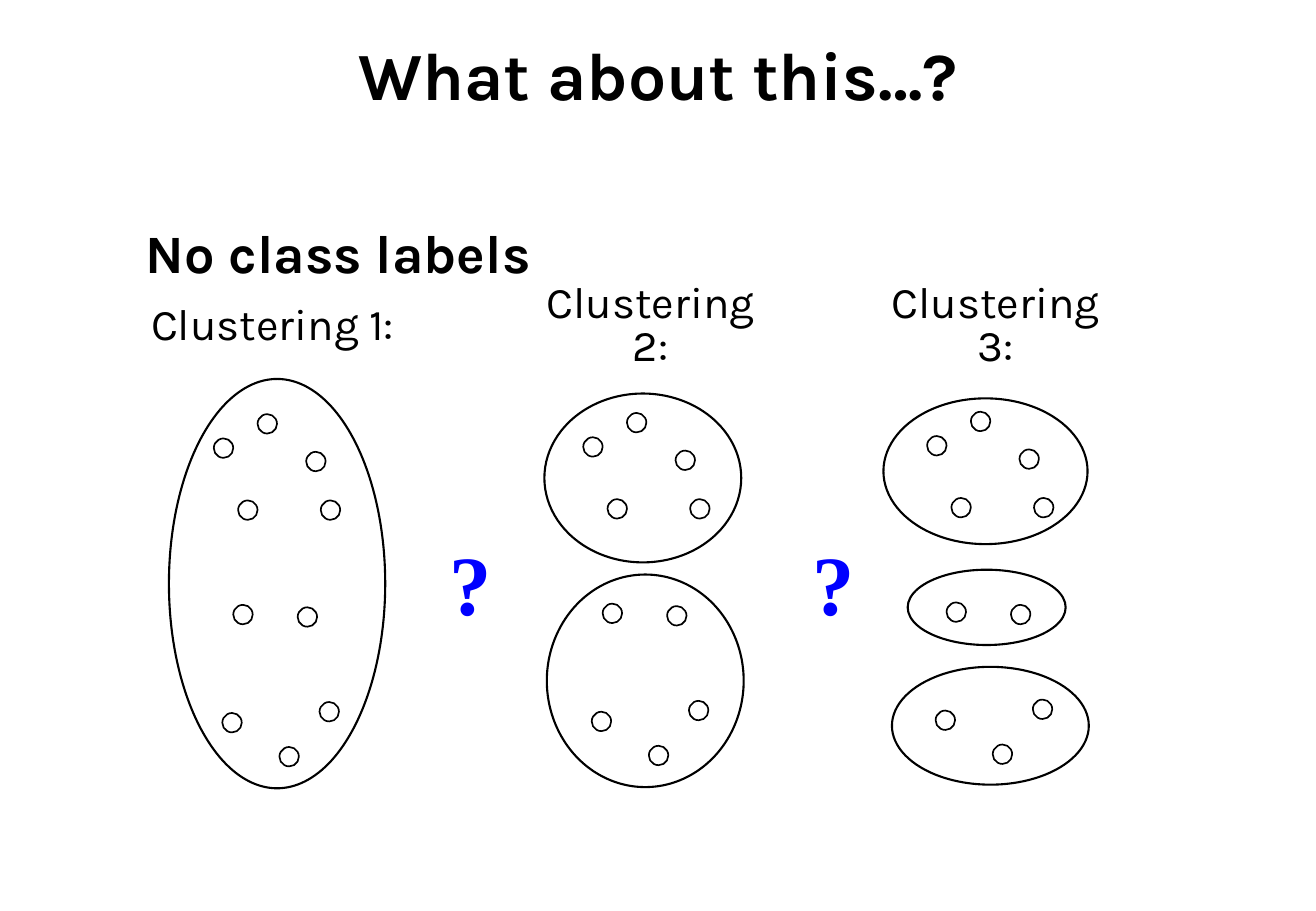
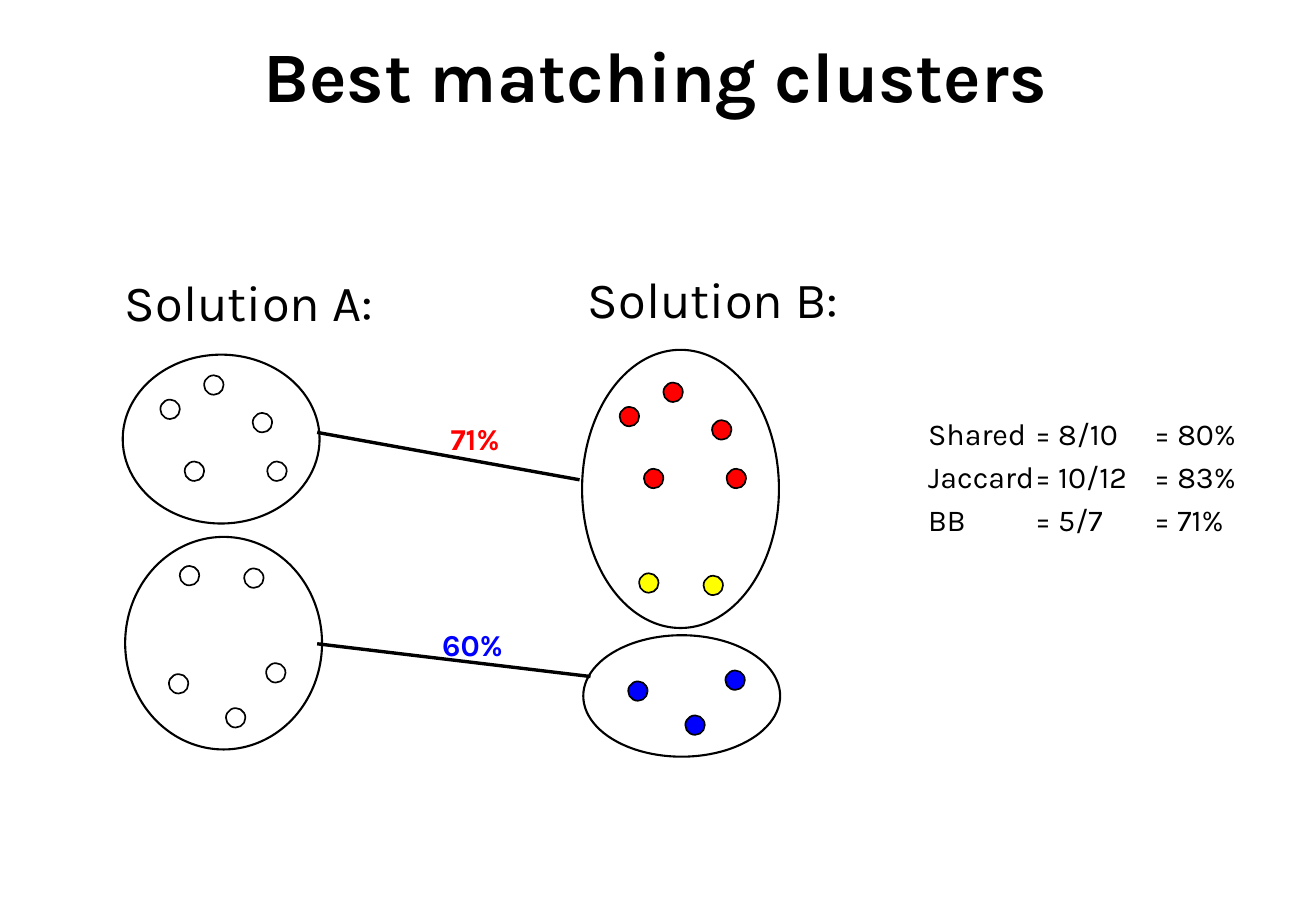
"""Build two slides that compare clusterings and match their clusters."""
from lxml.etree import SubElement
from pptx import Presentation
from pptx.dml.color import RGBColor as RGB
from pptx.enum.shapes import MSO_CONNECTOR as CONN, MSO_SHAPE as SHAPE
from pptx.enum.text import MSO_ANCHOR as ANCHOR, PP_ALIGN as ALIGN
from pptx.oxml.ns import qn
from pptx.util import Pt

PX = 9144
C = {"black": "000000", "white": "FFFFFF", "red": "FF0000", "yellow": "FFFF00", "blue": "0000FF"}
DOTS = {
    "top": [(176, 361), (196, 412), (212, 341), (252, 372), (264, 412)],
    "middle": [(192, 498), (245, 500)],
    "bottom": [(230, 615), (183, 587), (263, 578)],
}
PLAIN = dict.fromkeys(DOTS, "white")

prs = Presentation()
prs.slide_width, prs.slide_height = 1083 * PX, 750 * PX
blank = prs.slide_layouts[6]


def add_text(s, text, box, size=18, color="black", bold=False, font="Karla",
             align=ALIGN.LEFT, anchor=ANCHOR.TOP, spacing=1.0, tabs=()):
    tf = s.shapes.add_textbox(*[v * PX for v in box]).text_frame
    tf.word_wrap = True
    tf.vertical_anchor = anchor
    for i, line in enumerate(text.split("\n")):
        p = tf.add_paragraph() if i else tf.paragraphs[0]
        p.alignment, p.line_spacing = align, spacing
        if tabs:
            stops = SubElement(p._p.get_or_add_pPr(), qn("a:tabLst"))
            for pos in tabs:
                SubElement(stops, qn("a:tab"), pos=str(pos * PX), algn="l")
        r = p.add_run()
        r.text = line
        r.font.name, r.font.size, r.font.bold = font, Pt(size), bold
        r.font.color.rgb = RGB.from_string(C[color])


def add_clustering(shapes, clusters, dx, dy, fills):
    ovals = [(box, "white", 1.25) for box in clusters]
    for part, dots in DOTS.items():
        ovals += [((x + dx, y + dy, 16, 16), fills[part], 1) for x, y in dots]
    for box, fill, width in ovals:
        sp = shapes.add_shape(SHAPE.OVAL, *[v * PX for v in box])
        sp.shadow.inherit = False
        sp.fill.solid()
        sp.fill.fore_color.rgb = RGB.from_string(C[fill])
        sp.line.color.rgb = RGB.from_string(C["black"])
        sp.line.width = Pt(width)


title = dict(bold=True, align=ALIGN.CENTER, anchor=ANCHOR.MIDDLE)

s = prs.slides.add_slide(blank)
add_text(s, "What about this…?", (69, 36, 945, 57), size=40, spacing=0.9, **title)
add_text(s, "No class labels", (110, 166, 351, 68), size=32, bold=True, spacing=1.19)

clusterings = [
    ((112, 225), (0, 0), [(139, 312, 178, 337)]),
    ((431, 209), (304, -1), [(448, 324, 162, 139), (450, 473, 162, 175)]),
    ((715, 209), (587, -2), [(727, 328, 168, 120), (747, 469, 130, 62), (734, 549, 162, 97)]),
]
for n, ((left, width), (dx, dy), clusters) in enumerate(clusterings, 1):
    add_text(s, f"Clustering {n}:", (left, 247, width, 45), size=26,
             align=ALIGN.CENTER, anchor=ANCHOR.MIDDLE, spacing=0.8)
    add_clustering(s.shapes.add_group_shape().shapes, clusters, dx, dy, PLAIN)
for left in (354, 653):
    add_text(s, "?", (left, 442, 66, 55), size=50, color="blue", bold=True,
             font="Times New Roman", align=ALIGN.CENTER, spacing=0.9)

s = prs.slides.add_slide(blank)
add_text(s, "Best matching clusters", (45, 21, 988, 87), size=42, spacing=0.93, **title)

solutions = [
    ("A", (93, 218), (-44, -32), PLAIN, [(103, 442, 162, 175), (101, 292, 162, 139)]),
    ("B", (474, 216), (334, -26), {"top": "red", "middle": "yellow", "bottom": "blue"},
     [(479, 288, 162, 229), (480, 523, 162, 100)]),
]
for name, (left, top), (dx, dy), fills, clusters in solutions:
    add_text(s, f"Solution {name}:", (left, top, 233, 60), size=30, anchor=ANCHOR.MIDDLE)
    add_clustering(s.shapes, clusters, dx, dy, fills)

matches = [
    ("71%", "red", (361, 335), (477, 395, 261, 356)),
    ("60%", "blue", (354, 505), (486, 557, 261, 530)),
]
for label, color, (left, top), ends in matches:
    link = s.shapes.add_connector(CONN.STRAIGHT, *[v * PX for v in ends])
    link.line.color.rgb = RGB.from_string(C["black"])
    link.line.width = Pt(2)
    SubElement(link._element.spPr, qn("a:effectLst"))
    add_text(s, label, (left, top, 83, 42), color=color, bold=True, spacing=1.19)

add_text(s, "Shared\t= 8/10\t= 80%\nJaccard\t= 10/12\t= 83%\nBB\t= 5/7\t= 71%",
         (754, 331, 287, 114), spacing=1.19, tabs=(88, 186))

prs.save("out.pptx")
